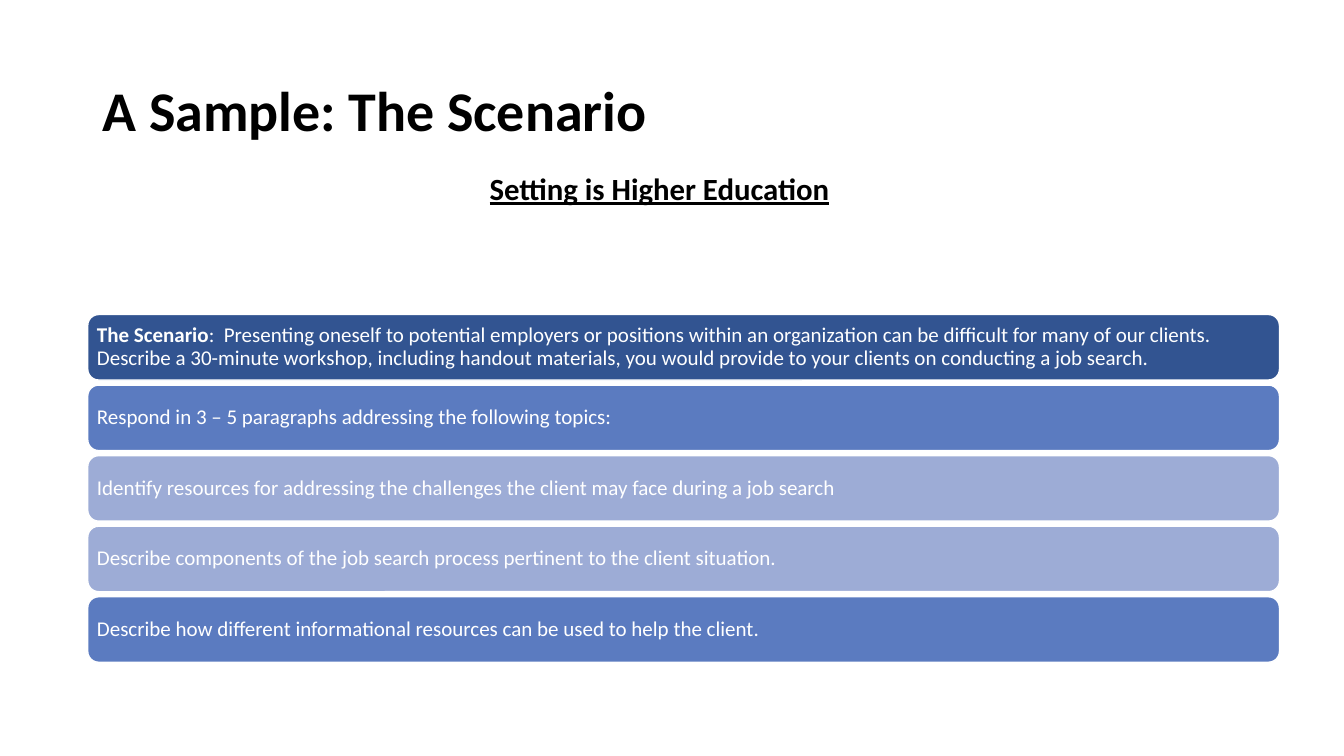
import pptx
import pptx.dml.color
import pptx.enum.shapes
import pptx.enum.text
import pptx.util

PX = 9144
ANCHOR = pptx.enum.text.MSO_ANCHOR
ALIGN = pptx.enum.text.PP_ALIGN


def color(value):
    return pptx.dml.color.RGBColor.from_string(value)


def add_text(para, text, size=15, ink="FFFFFF", bold=False, underline=False):
    span = para.add_run()
    span.text = text
    span.font.name = "Calibri"
    span.font.size = pptx.util.Pt(size)
    span.font.bold = bold
    span.font.underline = underline
    span.font.color.rgb = color(ink)


class ScenarioPage:
    ink = "000000"
    line = "FFFFFF"

    def __init__(self, deck):
        self.page = deck.slides.add_slide(deck.slide_layouts[6])

    def heading(self, text, area, size, anchor=ANCHOR.TOP, align=ALIGN.LEFT,
                before=0, spacing=1.0, underline=False):
        box = self.page.shapes.add_textbox(*[length * PX for length in area])
        frame = box.text_frame
        frame.word_wrap = True
        frame.vertical_anchor = anchor
        para = frame.paragraphs[0]
        para.alignment = align
        para.space_before = pptx.util.Pt(before)
        para.line_spacing = spacing
        add_text(para, text, size=size, ink=self.ink, bold=True, underline=underline)

    def bar(self, area, fill, text, lead=""):
        kind = pptx.enum.shapes.MSO_SHAPE.ROUNDED_RECTANGLE
        box = self.page.shapes.add_shape(kind, *[length * PX for length in area])
        box.shadow.inherit = False
        box.fill.solid()
        box.fill.fore_color.rgb = color(fill)
        box.line.color.rgb = color(self.line)
        box.line.width = pptx.util.Pt(1)
        frame = box.text_frame
        frame.word_wrap = True
        frame.vertical_anchor = ANCHOR.MIDDLE
        frame.margin_left = frame.margin_right = 6 * PX
        frame.margin_top = frame.margin_bottom = 6 * PX
        para = frame.paragraphs[0]
        para.alignment = ALIGN.LEFT
        para.line_spacing = 0.9
        if lead:
            add_text(para, lead, bold=True)
        add_text(para, text)


def main():
    deck = pptx.Presentation()
    deck.slide_width = pptx.util.Inches(13.33)
    deck.slide_height = pptx.util.Inches(7.5)
    page = ScenarioPage(deck)
    page.heading("A Sample: The Scenario", (92, 40, 1150, 145), 40,
                 anchor=ANCHOR.MIDDLE, spacing=0.9)
    page.heading("Setting is Higher Education", (79, 163, 1150, 59), 22,
                 align=ALIGN.CENTER, before=6, underline=True)
    bars = [
        ("325491", ":  Presenting oneself to potential employers or positions within an "
                   "organization can be difficult for many of our clients. Describe a "
                   "30-minute workshop, including handout materials, you would provide to "
                   "your clients on conducting a job search.", "The Scenario"),
        ("5B7BC0", "Respond in 3 – 5 paragraphs addressing the following topics:"),
        ("9DACD6", "Identify resources for addressing the challenges the client may face "
                   "during a job search"),
        ("9DACD6", "Describe components of the job search process pertinent to the client "
                   "situation."),
        ("5B7BC0", "Describe how different informational resources can be used to help "
                   "the client."),
    ]
    for row, content in enumerate(bars):
        page.bar((87, 312 + 70 * row, 1182, 65), *content)
    deck.save("out.pptx")


if __name__ == "__main__":
    main()
